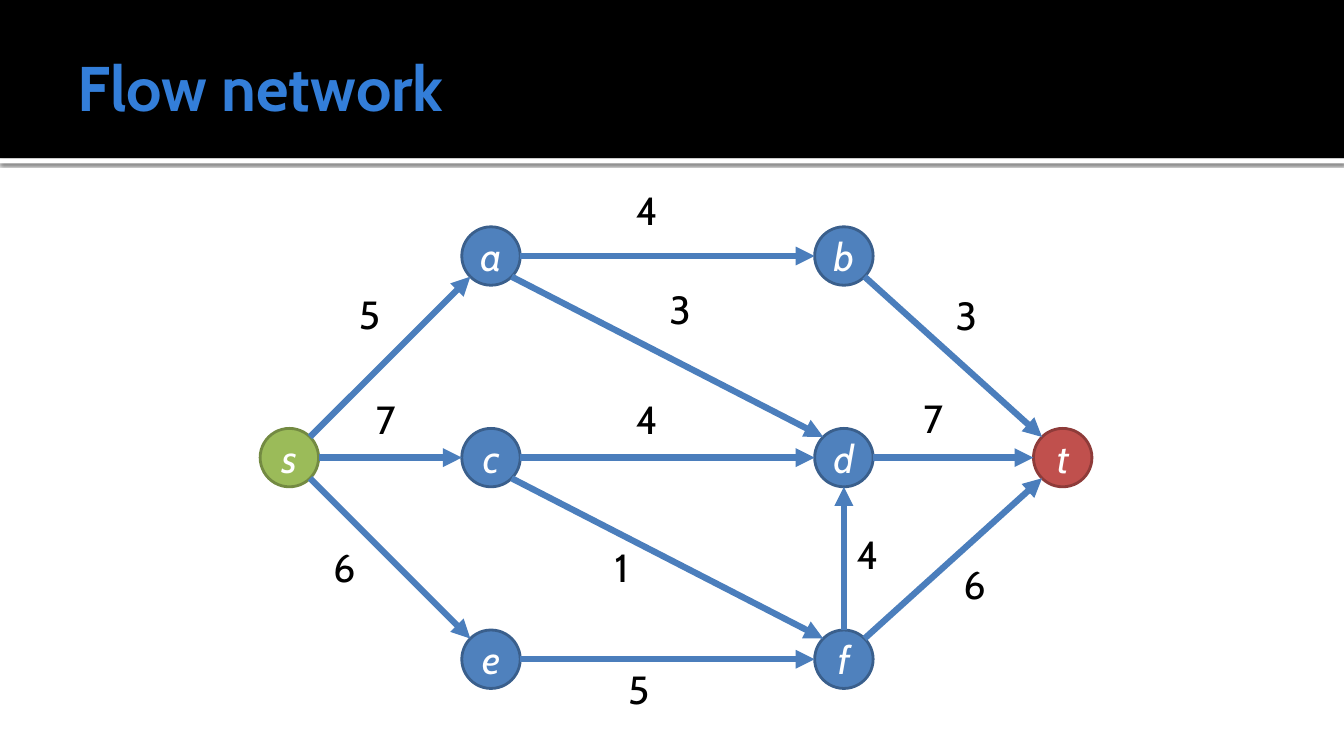
from dataclasses import dataclass
from math import hypot

from lxml.etree import SubElement
from pptx import Presentation
from pptx.dml.color import RGBColor
from pptx.enum.shapes import MSO_CONNECTOR, MSO_SHAPE
from pptx.enum.text import MSO_ANCHOR, MSO_AUTO_SIZE, PP_ALIGN
from pptx.oxml.ns import qn
from pptx.util import Inches, Pt

FONT = "Cabin"
COLORS = {
    "white": "FFFFFF", "black": "000000", "title": "337ED9", "edge": "4B7EBC",
    "source": "9BBB59", "source_line": "738A42",
    "sink": "C0504D", "sink_line": "8E3B39",
    "inner": "4F81BD", "inner_line": "3A5F8C",
}
WIDTH, HEIGHT = 13.33, 7.5
BAND = 1.57
COLS = (2.87, 4.87, 8.37, 10.54)
ROWS = (2.54, 4.54, 6.54)
DIAMETER = 0.58
LABEL_W, LABEL_H = 0.67, 0.57


@dataclass(frozen=True)
class Node:
    name: str
    col: int
    row: int
    role: str = "inner"

    @property
    def center(self) -> tuple[float, float]:
        return COLS[self.col], ROWS[self.row]


@dataclass(frozen=True)
class Edge:
    start: str
    end: str
    capacity: str
    label_x: float
    label_y: float


NODES = (
    Node("s", 0, 1, "source"), Node("t", 3, 1, "sink"),
    Node("a", 1, 0), Node("b", 2, 0), Node("c", 1, 1),
    Node("d", 2, 1), Node("e", 1, 2), Node("f", 2, 2),
)
EDGES = (
    Edge("s", "c", "7", 3.49, 3.87), Edge("s", "a", "5", 3.33, 2.83),
    Edge("a", "b", "4", 6.08, 1.8), Edge("a", "d", "3", 6.41, 2.78),
    Edge("c", "d", "4", 6.08, 3.87), Edge("d", "t", "7", 8.92, 3.86),
    Edge("b", "t", "3", 9.25, 2.84), Edge("c", "f", "1", 5.83, 5.34),
    Edge("e", "f", "5", 6, 6.55), Edge("s", "e", "6", 3.08, 5.34),
    Edge("f", "d", "4", 8.27, 5.21), Edge("f", "t", "6", 9.33, 5.51),
)


def rgb(key: str) -> RGBColor:
    return RGBColor.from_string(COLORS[key])


def add_run(p, text: str, size: float, color: str, bold=False, italic=False) -> None:
    r = p.add_run()
    r.text = text
    r.font.name = FONT
    r.font.size = Pt(size)
    r.font.bold = bold
    r.font.italic = italic
    r.font.color.rgb = rgb(color)


def add_bar(slide, top: float, height: float, color: str):
    sp = slide.shapes.add_shape(
        MSO_SHAPE.RECTANGLE, 0, Inches(top), Inches(WIDTH), Inches(height))
    sp.shadow.inherit = False
    sp.fill.solid()
    sp.fill.fore_color.rgb = rgb(color)
    sp.line.fill.background()
    return sp


def add_header(slide, text: str) -> None:
    rule = add_bar(slide, BAND, 0.05, "white")
    effects = rule._element.spPr.find(qn("a:effectLst"))
    shadow = SubElement(effects, qn("a:outerShdw"), blurRad=str(Pt(2.5)),
                        dist=str(Pt(0.8)), dir="5400000", algn="tl", rotWithShape="0")
    color = SubElement(shadow, qn("a:srgbClr"), val=COLORS["black"])
    SubElement(color, qn("a:alpha"), val="60000")
    add_bar(slide, 0, BAND, "black")

    title = slide.shapes.title
    slide.shapes._spTree.append(title._element)
    title.left, title.top = Inches(0.67), Inches(0.17)
    title.width, title.height = Inches(12), Inches(1.37)
    tf = title.text_frame
    tf.auto_size = MSO_AUTO_SIZE.NONE
    tf.vertical_anchor = MSO_ANCHOR.MIDDLE
    tf.margin_left = Inches(0.1)
    tf.margin_right = tf.margin_top = tf.margin_bottom = Inches(0.05)
    p = tf.paragraphs[0]
    p.alignment = PP_ALIGN.LEFT
    add_run(p, text, 45, "title", bold=True)


def add_node(slide, node: Node) -> None:
    x, y = node.center
    sp = slide.shapes.add_shape(
        MSO_SHAPE.OVAL, Inches(x - DIAMETER / 2), Inches(y - DIAMETER / 2),
        Inches(DIAMETER), Inches(DIAMETER))
    sp.shadow.inherit = False
    sp.fill.solid()
    sp.fill.fore_color.rgb = rgb(node.role)
    sp.line.color.rgb = rgb(f"{node.role}_line")
    sp.line.width = Pt(2)
    tf = sp.text_frame
    tf.word_wrap = False
    tf.margin_left = tf.margin_right = tf.margin_top = tf.margin_bottom = 0
    tf.vertical_anchor = MSO_ANCHOR.MIDDLE
    p = tf.paragraphs[0]
    p.alignment = PP_ALIGN.CENTER
    add_run(p, node.name, 28, "white", italic=True)


def rim_offset(start: Node, end: Node) -> tuple[float, float]:
    dx = (end.col > start.col) - (end.col < start.col)
    dy = (end.row > start.row) - (end.row < start.row)
    scale = DIAMETER / 2 / hypot(dx, dy)
    return dx * scale, dy * scale


def add_edge(slide, start: Node, end: Node) -> None:
    (x1, y1), (x2, y2) = start.center, end.center
    dx, dy = rim_offset(start, end)
    cxn = slide.shapes.add_connector(
        MSO_CONNECTOR.STRAIGHT, Inches(x1 + dx), Inches(y1 + dy),
        Inches(x2 - dx), Inches(y2 - dy))
    cxn.line.color.rgb = rgb("edge")
    cxn.line.width = Pt(4.5)
    SubElement(cxn.line._get_or_add_ln(), qn("a:tailEnd"), type="triangle")
    SubElement(cxn._element.spPr, qn("a:effectLst"))


def add_capacity(slide, edge: Edge) -> None:
    sp = slide.shapes.add_textbox(Inches(edge.label_x), Inches(edge.label_y),
                                  Inches(LABEL_W), Inches(LABEL_H))
    tf = sp.text_frame
    tf.word_wrap = True
    tf.auto_size = MSO_AUTO_SIZE.SHAPE_TO_FIT_TEXT
    p = tf.paragraphs[0]
    p.alignment = PP_ALIGN.CENTER
    add_run(p, edge.capacity, 28, "black")


def main() -> None:
    prs = Presentation()
    prs.slide_width, prs.slide_height = Inches(WIDTH), Inches(HEIGHT)
    slide = prs.slides.add_slide(prs.slide_layouts.get_by_name("Title Only"))
    add_header(slide, "Flow network")
    for node in NODES:
        add_node(slide, node)
    by_name = {node.name: node for node in NODES}
    for edge in EDGES:
        add_edge(slide, by_name[edge.start], by_name[edge.end])
    for edge in EDGES:
        add_capacity(slide, edge)
    prs.save("out.pptx")


if __name__ == "__main__":
    main()
